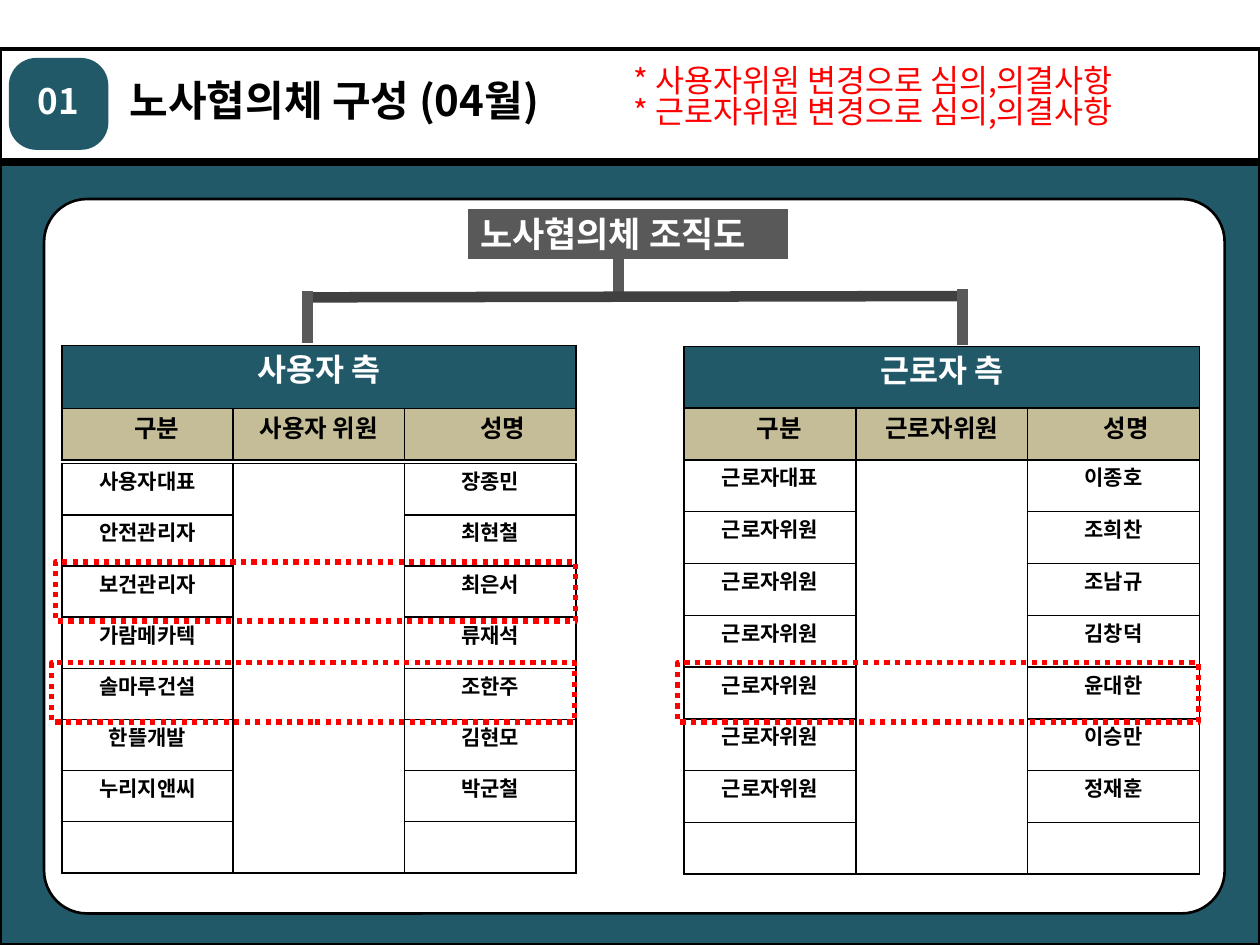
from dataclasses import dataclass

from lxml import etree
from pptx import Presentation
from pptx import util as u
from pptx.dml.color import RGBColor
from pptx.enum import dml, shapes, text
from pptx.oxml.ns import qn


@dataclass(frozen=True)
class Theme:
    """Hold the colours, font and type sizes of the slide."""
    font: str = "Noto Sans CJK KR"
    teal: str = "215968"
    tan: str = "C4BD97"
    gray: str = "595959"
    dark: str = "404040"
    red: str = "FF0000"
    black: str = "000000"
    white: str = "FFFFFF"
    title: int = 24
    chart: int = 20
    side: int = 18
    head: int = 14
    body: int = 12
    leading: float = 0.81


T = Theme()
EMPLOYER = [("사용자대표", "장종민"), ("안전관리자", "최현철"), ("보건관리자", "최은서"),
            ("가람메카텍", "류재석"), ("솔마루건설", "조한주"), ("한뜰개발", "김현모"),
            ("누리지앤씨", "박군철"), ("", "")]
WORKER = [("근로자대표", "이종호")] + [
    ("근로자위원", name) for name in ("조희찬", "조남규", "김창덕", "윤대한", "이승만", "정재훈")
] + [("", "")]


def rgb(value):
    """Turn a hex string into a colour."""
    return RGBColor.from_string(value)


def box_of(box):
    """Turn a box in inches into lengths."""
    return [u.Inches(v) for v in box]


def write(tf, lines, size, color, bold=True, align=text.PP_ALIGN.LEFT):
    """Write lines of text into a text frame."""
    for i, line in enumerate(lines):
        p = tf.add_paragraph() if i else tf.paragraphs[0]
        p.alignment, p.line_spacing = align, T.leading
        if line:
            r = p.add_run()
            r.text = line
            for key, value in {"size": u.Pt(size), "bold": bold, "name": T.font}.items():
                setattr(r.font, key, value)
            r.font.color.rgb = rgb(color)
            ea = etree.SubElement(r.font._element, qn("a:ea"))
            ea.set("typeface", T.font)
        p._p.get_or_add_endParaRPr().set("sz", str(size * 100))


def add_panel(s, kind, box, fill=None, line=None, width=2, adj=None):
    """Add a filled or outlined preset shape."""
    sp = s.shapes.add_shape(kind, *box_of(box))
    sp.shadow.inherit = False
    if adj is not None:
        sp.adjustments[0] = adj
    if fill:
        sp.fill.solid()
        sp.fill.fore_color.rgb = rgb(fill)
    else:
        sp.fill.background()
    if line:
        sp.line.color.rgb = rgb(line)
        sp.line.width = u.Pt(width)
    else:
        sp.line.fill.background()
    return sp


def add_text(s, box, lines, size, color, bold=True):
    """Add a wrapping text box."""
    tf = s.shapes.add_textbox(*box_of(box)).text_frame
    tf.word_wrap = True
    tf.auto_size = text.MSO_AUTO_SIZE.SHAPE_TO_FIT_TEXT
    write(tf, lines, size, color, bold)


def add_line(s, start, end, color):
    """Add one thick branch of the organisation chart."""
    ends = [u.Inches(v) for v in (*start, *end)]
    c = s.shapes.add_connector(shapes.MSO_CONNECTOR.STRAIGHT, *ends)
    c.line.color.rgb = rgb(color)
    c.line.width = u.Pt(6)
    etree.SubElement(c._element.spPr, qn("a:effectLst"))


def set_borders(cell, color):
    """Draw a one point border on every edge of a cell."""
    tc_pr = cell._tc.get_or_add_tcPr()
    for edge in ("lnL", "lnR", "lnT", "lnB"):
        ln = etree.SubElement(tc_pr, qn(f"a:{edge}"), w=str(u.Pt(1)))
        fill = etree.SubElement(ln, qn("a:solidFill"))
        etree.SubElement(fill, qn("a:srgbClr"), val=color)


def add_grid(s, box, rows, size, fill, color, border=T.black, align=text.PP_ALIGN.CENTER):
    """Add a table with equal rows and columns that fills its box."""
    x, y, w, h = box_of(box)
    table = s.shapes.add_table(len(rows), len(rows[0]), x, y, w, h).table
    for column in table.columns:
        column.width = w // len(rows[0])
    for row, values in zip(table.rows, rows):
        row.height = h // len(rows)
        for cell, value in zip(row.cells, values):
            set_borders(cell, border)
            cell.fill.solid()
            cell.fill.fore_color.rgb = rgb(fill)
            write(cell.text_frame, [value], size, color, align=align)
    return table


def add_header(s, box):
    """Add the heading band with its number, title and notes."""
    x, y, w, h = box
    add_panel(s, shapes.MSO_SHAPE.RECTANGLE, box, line=T.black)
    add_text(s, (x + 0.93, y + 0.23, 3.9, 0.5), ["노사협의체 구성 (04월)"], T.title, T.black)
    badge = add_panel(s, shapes.MSO_SHAPE.ROUNDED_RECTANGLE,
                      (x + 0.07, y + 0.07, 0.79, 0.73), T.teal, adj=0.3)
    badge.text_frame.vertical_anchor = text.MSO_ANCHOR.MIDDLE
    write(badge.text_frame, ["01"], T.chart, T.white, align=text.PP_ALIGN.CENTER)
    notes = [f"* {side}위원 변경으로 심의,의결사항" for side in ("사용자", "근로자")]
    add_text(s, (x + 4.93, y + 0.1, 4.6, 0.71), notes, T.side, T.red, bold=False)


def add_background(s, box):
    """Add the teal backdrop and the white rounded panel."""
    x, y, w, h = box
    add_panel(s, shapes.MSO_SHAPE.RECTANGLE, box, T.teal, T.black)
    add_panel(s, shapes.MSO_SHAPE.ROUNDED_RECTANGLE,
              (x + 0.35, y + 0.31, 9.37, 5.67), T.white, T.black, 1.5, 0.06)


def add_org_chart(s, box):
    """Add the chart title and the branches down to both sides."""
    x, y, w, h = box
    add_grid(s, (x + 1.27, y, 2.55, 0.41), [["노사협의체 조직도"]], T.chart,
             T.gray, T.white, T.white, text.PP_ALIGN.LEFT)
    add_line(s, (x + 2.47, y + 0.29), (x + 2.47, y + 0.7), T.gray)
    add_line(s, (x, y + 0.71), (x + w, y + 0.7), T.dark)
    add_line(s, (x, y + 0.66), (x, y + 1.07), T.gray)
    add_line(s, (x + w, y + 0.64), (x + w, y + h), T.gray)


def add_side(s, box, title, member, people, body_top):
    """Add the title, column heads and member list of one side."""
    x, y, w, h = box
    head = add_grid(s, (x, 3.24, w, 0.41), [["구분", member, "성명"]], T.head, T.tan, T.black)
    for column, margin in ((0, 0.25), (2, 0.3)):
        head.cell(0, column).margin_left = u.Inches(margin)
    add_grid(s, (x, y, w, 3.24 - y), [[title]], T.side, T.teal, T.white)
    rows = [(role, "", name) for role, name in people]
    body = add_grid(s, (x, body_top, w, y + h - body_top), rows, T.body, T.white, T.black)
    body.cell(0, 1).merge(body.cell(len(rows) - 1, 1))


def add_highlight(s, box):
    """Add a dotted red frame around a changed member."""
    sp = add_panel(s, shapes.MSO_SHAPE.RECTANGLE, box, line=T.red, width=3)
    sp.line.dash_style = dml.MSO_LINE.ROUND_DOT


def main():
    """Build and save the slide."""
    prs = Presentation()
    prs.slide_width, prs.slide_height = u.Inches(10), u.Inches(7.5)
    s = prs.slides.add_slide(prs.slide_layouts[6])
    add_background(s, (0, 1.27, 10, 6.23))
    add_header(s, (0, 0.39, 10, 0.91))
    add_org_chart(s, (2.44, 1.65, 5.2, 1.09))
    add_side(s, (0.49, 2.74, 4.08, 4.19), "사용자 측", "사용자 위원", EMPLOYER, 3.68)
    add_side(s, (5.43, 2.75, 4.09, 4.19), "근로자 측", "근로자위원", WORKER, 3.65)
    for box in ((0.44, 4.46, 4.13, 0.47), (0.41, 5.26, 4.15, 0.47), (5.38, 5.26, 4.13, 0.47)):
        add_highlight(s, box)
    prs.save("out.pptx")


if __name__ == "__main__":
    main()
